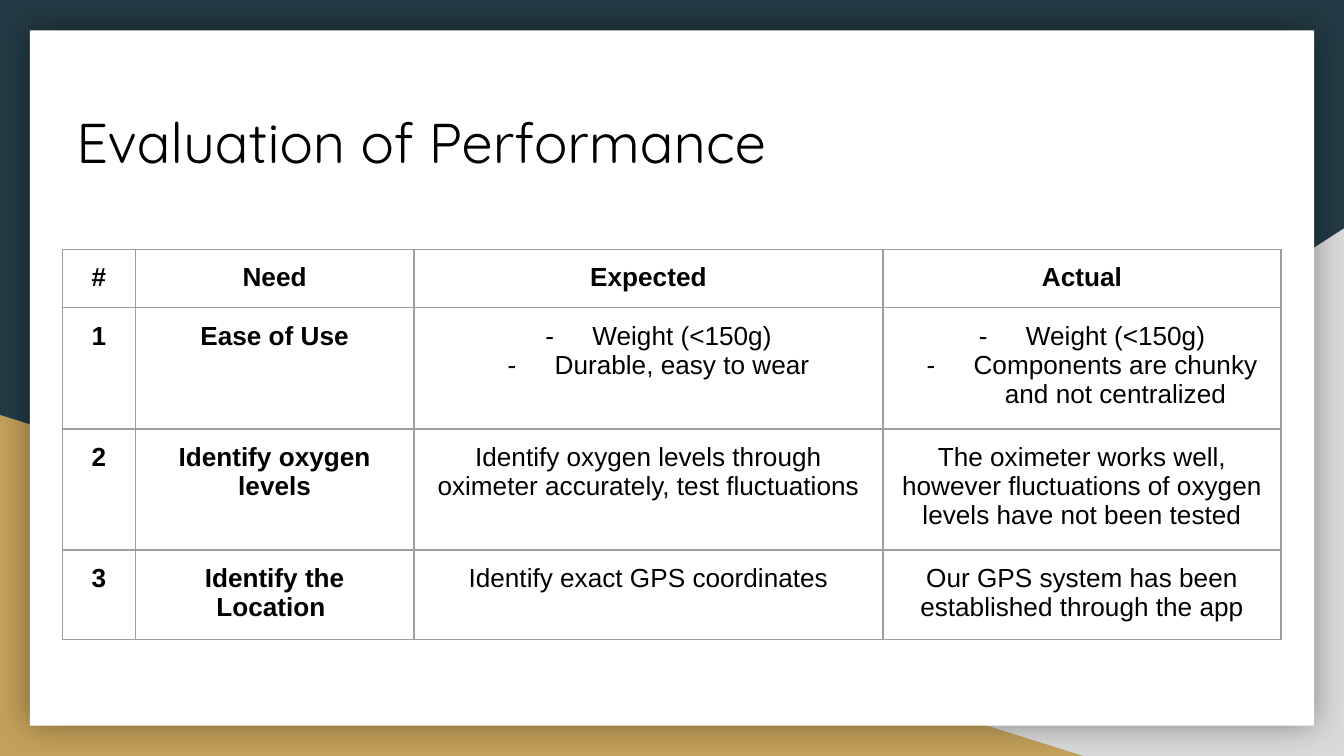
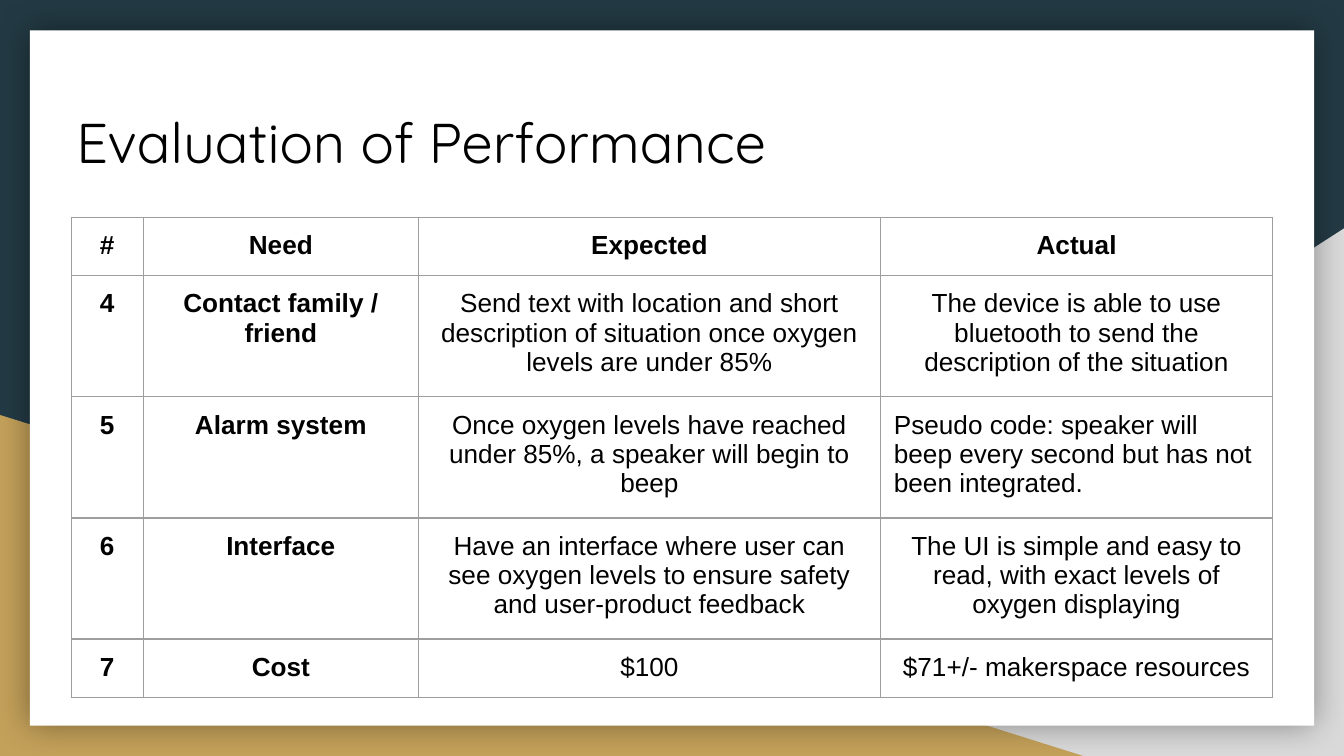
from typing import Any, NamedTuple

from lxml import etree
from pptx import Presentation
from pptx import util as u
from pptx.dml.color import RGBColor
from pptx.enum import shapes, text
from pptx.oxml import ns

Pt = u.Pt
NAVY = RGBColor(0x23, 0x3A, 0x44)
GRAY = RGBColor(0xD9, 0xD9, 0xD9)
GOLD = RGBColor(0xC4, 0xA1, 0x5A)
WHITE = RGBColor(0xFF, 0xFF, 0xFF)
BLACK = RGBColor(0, 0, 0)
LINE = RGBColor(0x9E, 0x9E, 0x9E)

INSET = Pt(7.2)
PAD = {f"margin_{side}": INSET for side in ("left", "top", "right", "bottom")}
TITLE = {"name": "Quicksand", "size": Pt(30)}
BODY = {"name": "Arial", "size": Pt(14)}
MID = text.PP_ALIGN.CENTER
LEFT = text.PP_ALIGN.LEFT


class Box(NamedTuple):
    left: float
    top: float
    width: float
    height: float

    def emu(self) -> list[int]:
        return [Pt(v) for v in self]


class Panel(NamedTuple):
    kind: shapes.MSO_SHAPE
    box: Box
    fill: RGBColor
    flip: bool = False
    glow: bool = False


class Cell(NamedTuple):
    lines: tuple[str, ...]
    align: text.PP_ALIGN = MID
    dash: bool = False


class Grid(NamedTuple):
    box: Box
    cols: tuple[float, ...]
    rows: tuple[float, ...]
    cells: list[tuple[str | Cell, ...]]


# Backdrop shared by all slides
WEDGE = shapes.MSO_SHAPE.RIGHT_TRIANGLE
PANELS = [
    Panel(WEDGE, Box(282.2, 122.4, 437.8, 282.6), GRAY, flip=True),
    Panel(WEDGE, Box(0, 222.3, 580.3, 182.7), GOLD),
    Panel(shapes.MSO_SHAPE.RECTANGLE, Box(16, 16.2, 688, 372.5), WHITE, glow=True),
]
HEAD = "Evaluation of Performance"
SPOT = Box(33.8, 50.4, 591, 75)
TOP = ("#", "Need", "Expected", "Actual")

# One table per slide
GRIDS = [
    Grid(
        Box(33.5, 133.7, 653, 208.8),
        (39, 149.3, 251.3, 213.2),
        (26.6, 52.6, 31, 31),
        [
            TOP,
            ("1", "Ease of Use",
             Cell(("Weight (<150g)", "Durable, easy to wear"), dash=True),
             Cell(("Weight (<150g)", "Components are chunky and not centralized"),
                  dash=True)),
            ("2", "Identify oxygen levels",
             "Identify oxygen levels through oximeter accurately, test fluctuations",
             "The oximeter works well, however fluctuations of oxygen levels "
             "have not been tested"),
            ("3", "Identify the Location ", "Identify exact GPS coordinates",
             "Our GPS system has been established through the app"),
        ],
    ),
    Grid(
        Box(38.1, 116.5, 643.8, 257),
        (38.7, 147.4, 247.5, 210.2),
        (26.6, 31, 31, 31, 31),
        [
            TOP,
            ("4", "Contact family / friend",
             "Send text with location and short description of situation once "
             "oxygen levels are under 85%",
             "The device is able to use bluetooth to send the description of "
             "the situation"),
            ("5", "Alarm system",
             "Once oxygen levels have reached under 85%, a speaker will begin to beep",
             Cell(("Pseudo code: speaker will beep every second but has not been "
                   "integrated.",), LEFT)),
            ("6", "Interface",
             "Have an interface where user can see oxygen levels to ensure safety "
             "and user-product feedback",
             "The UI is simple and easy to read, with exact levels of oxygen "
             "displaying"),
            ("7", "Cost", "$100", "$71+/- makerspace resources"),
        ],
    ),
]


def apply(obj: Any, form: dict[str, Any]) -> None:
    for key, val in form.items():
        setattr(obj, key, val)


def add(node: Any, tag: str, **attrs: Any) -> Any:
    return etree.SubElement(node, ns.qn(tag), {k: str(v) for k, v in attrs.items()})


def write(para: Any, line: str, form: dict[str, Any], align: Any = LEFT) -> None:
    para.alignment = align
    run = para.add_run()
    run.text = line
    apply(run.font, form)
    run.font.color.rgb = BLACK


def draw_panel(slide: Any, part: Panel) -> None:
    shape = slide.shapes.add_shape(part.kind, *part.box.emu())
    shape.shadow.inherit = False
    shape.fill.solid()
    shape.fill.fore_color.rgb = part.fill
    shape.line.fill.background()
    props = shape.element.spPr
    if part.flip:
        props.find(ns.qn("a:xfrm")).set("flipH", "1")
    if part.glow:
        glow = add(props.find(ns.qn("a:effectLst")), "a:outerShdw",
                   blurRad=Pt(18), dist=0, dir=0, algn="ctr", rotWithShape=0)
        add(add(glow, "a:srgbClr", val=BLACK), "a:alpha", val=40000)


def draw_title(slide: Any) -> None:
    frame = slide.shapes.add_textbox(*SPOT.emu()).text_frame
    apply(frame, PAD | {"word_wrap": True, "vertical_anchor": text.MSO_ANCHOR.TOP})
    write(frame.paragraphs[0], HEAD, TITLE)


def add_dash(para: Any) -> None:
    props = para._p.get_or_add_pPr()
    props.set("marL", str(Pt(36)))
    props.set("indent", str(Pt(-25.2)))
    add(add(props, "a:buClr"), "a:srgbClr", val=BLACK)
    add(props, "a:buFont", typeface="Arial")
    add(props, "a:buChar", char="-")


def fill_cell(cell: Any, item: Cell, bold: bool) -> None:
    apply(cell, PAD)
    props = cell._tc.get_or_add_tcPr()
    for side in "LRTB":
        edge = add(props, f"a:ln{side}", w=Pt(0.75))
        add(add(edge, "a:solidFill"), "a:srgbClr", val=LINE)
    cell.fill.background()
    frame = cell.text_frame
    for i, line in enumerate(item.lines):
        para = frame.add_paragraph() if i else frame.paragraphs[0]
        write(para, line, BODY | {"bold": bold}, item.align)
        if item.dash:
            add_dash(para)


def draw_grid(slide: Any, grid: Grid) -> None:
    holder = slide.shapes.add_table(len(grid.rows), len(grid.cols), *grid.box.emu())
    table = holder.table
    apply(table, {"first_row": False, "horz_banding": False})
    for col, width in zip(table.columns, grid.cols):
        col.width = Pt(width)
    for row, height in zip(table.rows, grid.rows):
        row.height = Pt(height)
    holder.height = Pt(grid.box.height)
    for r, line in enumerate(grid.cells):
        for c, item in enumerate(line):
            item = Cell((item,)) if isinstance(item, str) else item
            # The header row and the first two columns are bold
            fill_cell(table.cell(r, c), item, r == 0 or c < 2)


def main() -> None:
    deck = Presentation()
    apply(deck, {"slide_width": Pt(720), "slide_height": Pt(405)})
    for grid in GRIDS:
        slide = deck.slides.add_slide(deck.slide_layouts[6])
        slide.background.fill.solid()
        slide.background.fill.fore_color.rgb = NAVY
        for part in PANELS:
            draw_panel(slide, part)
        draw_title(slide)
        draw_grid(slide, grid)
    deck.save("out.pptx")


if __name__ == "__main__":
    main()
